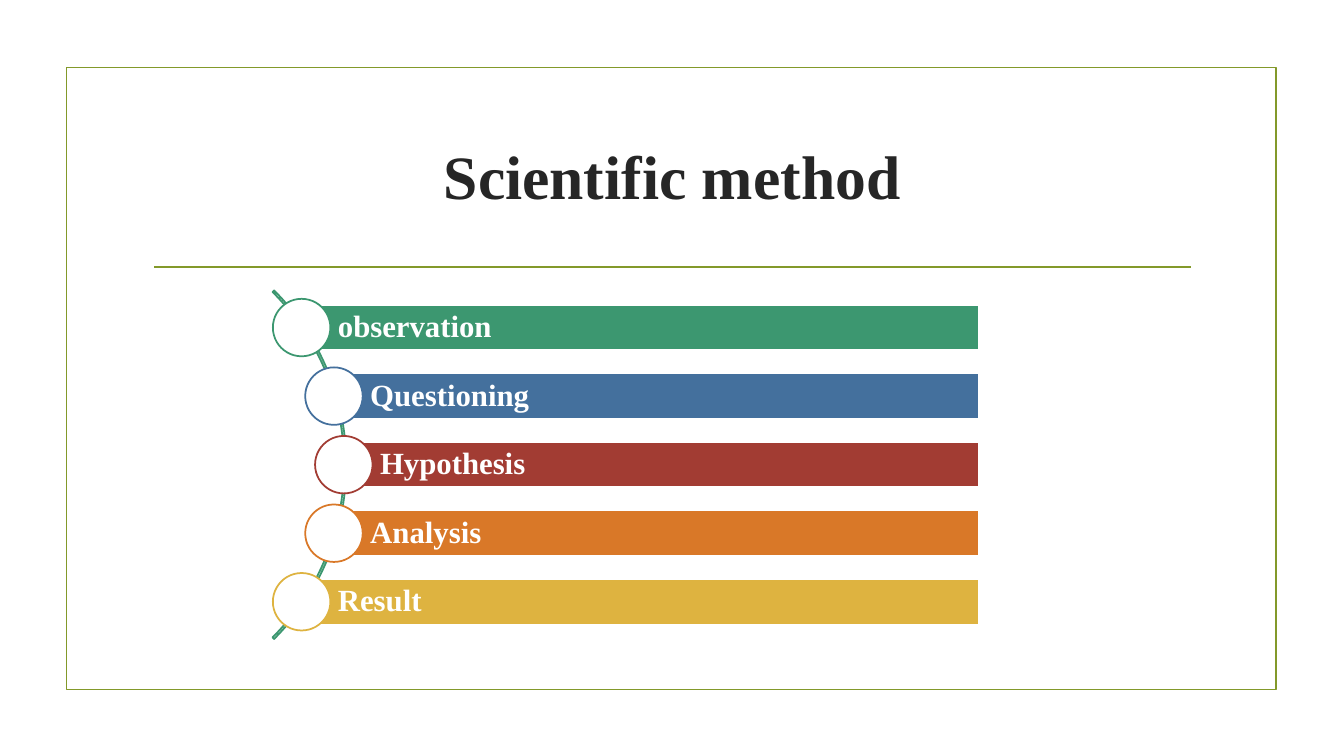
from dataclasses import dataclass
from math import sqrt

from pptx import Presentation
from pptx.dml.color import RGBColor
from pptx.enum.shapes import MSO_CONNECTOR, MSO_SHAPE
from pptx.enum.text import MSO_ANCHOR, PP_ALIGN
from pptx.oxml.ns import qn
from pptx.util import Inches, Pt

RECTANGLE, OVAL, ARC = MSO_SHAPE.RECTANGLE, MSO_SHAPE.OVAL, MSO_SHAPE.BLOCK_ARC
STRAIGHT = MSO_CONNECTOR.STRAIGHT
MIDDLE = MSO_ANCHOR.MIDDLE
LEFT, CENTER = PP_ALIGN.LEFT, PP_ALIGN.CENTER

TITLE = "Scientific method"
STEPS = [
    ("observation", "3C9770"),
    ("Questioning", "44709D"),
    ("Hypothesis", "A23C33"),
    ("Analysis", "D97828"),
    ("Result", "DEB340"),
]


@dataclass(frozen=True)
class Theme:
    font: str = "Times New Roman"
    title_size: float = 44
    step_size: float = 22
    line_width: float = 1.25
    ink: str = "262626"
    white: str = "FFFFFF"
    accent: str = "83992A"
    arc: str = "3C9770"


THEME = Theme()

# Lengths in inches
SLIDE_WIDTH, SLIDE_HEIGHT = 13.33, 7.5
FRAME = (0.66, 0.67, 12, 6.17)
TITLE_BOX = (1.42, 1.07, 10.5, 1.43)
RULE_LEFT, RULE_RIGHT, RULE_TOP = 1.53, 11.81, 2.65
ARC_X, ARC_Y, ARC_SIZE = 0.99, 4.61, 4.89
ARC_ADJUSTMENTS = (189, 27, 0.0045)
DISC_ORBIT, DISC_SIZE = 2.42, 0.57
ROW_PITCH = 0.68
BAR_RIGHT, BAR_HEIGHT = 9.71, 0.45
BAR_INSET, BAR_PADDING = 0.36, 0.06


def add_outlined(slide, kind, box, line, fill=None):
    shape = slide.shapes.add_shape(kind, *map(Inches, box))
    shape.shadow.inherit = False
    if fill:
        shape.fill.solid()
        shape.fill.fore_color.rgb = RGBColor.from_string(fill)
    else:
        shape.fill.background()
    style_line(shape.line, line)
    return shape


def style_line(line, color):
    line.color.rgb = RGBColor.from_string(color)
    line.width = Pt(THEME.line_width)


def write(shape, text, size, color, alignment):
    frame = shape.text_frame
    frame.text = text
    frame.word_wrap = True
    frame.vertical_anchor = MIDDLE
    paragraph = frame.paragraphs[0]
    paragraph.alignment = alignment
    paragraph.line_spacing = 0.9
    font = paragraph.runs[0].font
    font.name, font.size, font.bold = THEME.font, Pt(size), True
    font.color.rgb = RGBColor.from_string(color)
    return frame


def add_heading(slide):
    add_outlined(slide, RECTANGLE, FRAME, THEME.accent)
    ends = (RULE_LEFT, RULE_TOP, RULE_RIGHT, RULE_TOP)
    rule = slide.shapes.add_connector(STRAIGHT, *map(Inches, ends))
    style_line(rule.line, THEME.accent)
    properties = rule._element.spPr
    properties.append(properties.makeelement(qn("a:effectLst"), {}))
    title = slide.shapes.add_textbox(*map(Inches, TITLE_BOX))
    write(title, TITLE, THEME.title_size, THEME.ink, CENTER)


def add_arc(slide):
    box = (ARC_X - ARC_SIZE / 2, ARC_Y - ARC_SIZE / 2, ARC_SIZE, ARC_SIZE)
    arc = add_outlined(slide, ARC, box, THEME.arc)
    for index, value in enumerate(ARC_ADJUSTMENTS):
        arc.adjustments[index] = value


def add_step(slide, row, label, color):
    """Place one bar and its disc, the disc centred on the arc."""
    offset = (row - (len(STEPS) - 1) / 2) * ROW_PITCH
    x, y = ARC_X + sqrt(DISC_ORBIT**2 - offset**2), ARC_Y + offset
    bar_box = (x, y - BAR_HEIGHT / 2, BAR_RIGHT - x, BAR_HEIGHT)
    bar = add_outlined(slide, RECTANGLE, bar_box, THEME.white, color)
    frame = write(bar, label, THEME.step_size, THEME.white, LEFT)
    frame.margin_left = Inches(BAR_INSET)
    frame.margin_top = frame.margin_right = frame.margin_bottom = Inches(BAR_PADDING)
    disc_box = (x - DISC_SIZE / 2, y - DISC_SIZE / 2, DISC_SIZE, DISC_SIZE)
    add_outlined(slide, OVAL, disc_box, color, THEME.white)


def main():
    presentation = Presentation()
    presentation.slide_width = Inches(SLIDE_WIDTH)
    presentation.slide_height = Inches(SLIDE_HEIGHT)
    slide = presentation.slides.add_slide(presentation.slide_layouts[6])
    add_heading(slide)
    add_arc(slide)
    for row, (label, color) in enumerate(STEPS):
        add_step(slide, row, label, color)
    presentation.save("out.pptx")


if __name__ == "__main__":
    main()
